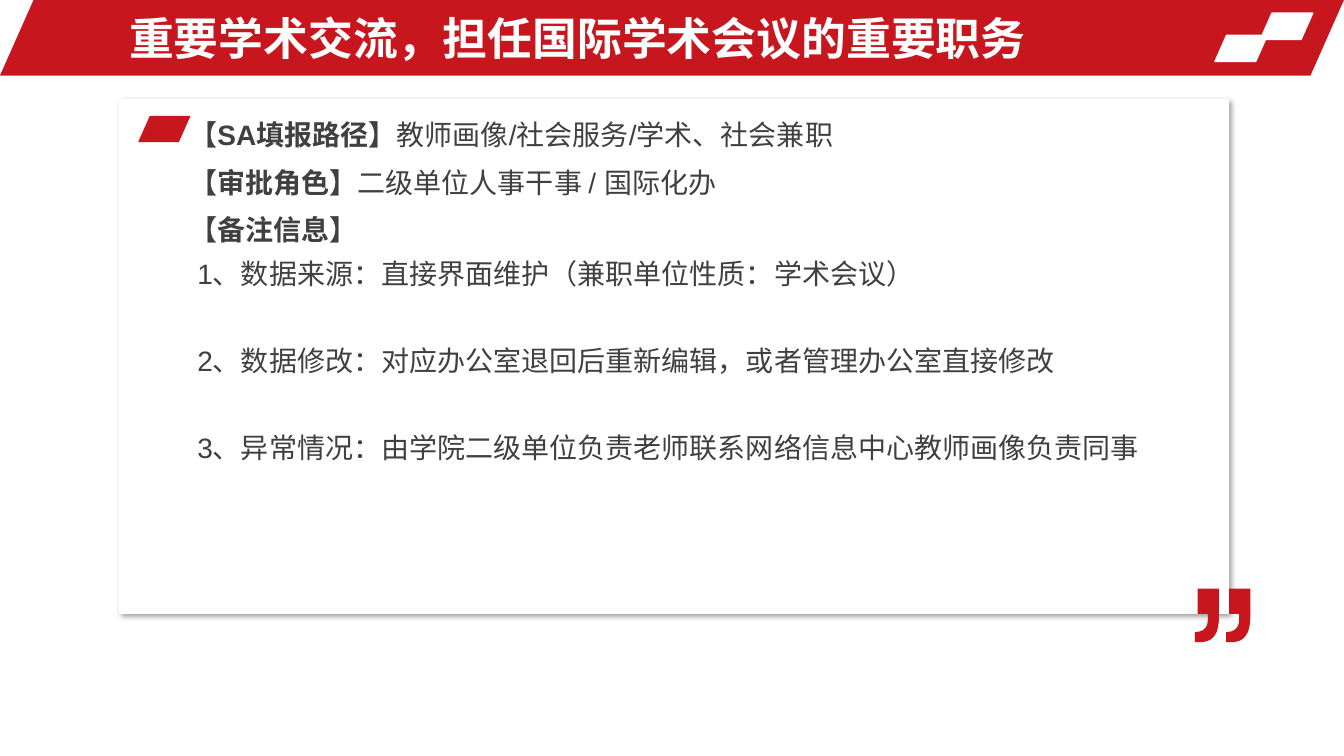
import dataclasses

import lxml.etree
import pptx
import pptx.dml.color
import pptx.enum.shapes
import pptx.enum.text
import pptx.oxml
import pptx.oxml.ns
import pptx.util


@dataclasses.dataclass(frozen=True)
class Theme:
    red = pptx.dml.color.RGBColor(0xC8, 0x16, 0x1E)
    white = pptx.dml.color.RGBColor(0xFF, 0xFF, 0xFF)
    ink = pptx.dml.color.RGBColor(0x40, 0x40, 0x40)
    font = "Arial"
    title_size = pptx.util.Pt(32)
    body_size = pptx.util.Pt(20)


theme = Theme()
deck = pptx.Presentation()
deck.slide_width = pptx.util.Inches(13.33)
deck.slide_height = pptx.util.Inches(7.5)
column = deck.slide_width / 100
row = deck.slide_height / 100
page = deck.slides.add_slide(deck.slide_layouts[5])
kinds = pptx.enum.shapes.MSO_SHAPE


def add_block(kind, left, top, width, height, fill, adjustment):
    """Add a filled preset shape placed in columns and rows."""
    block = page.shapes.add_shape(
        kind, round(left * column), round(top * row), round(width * column), round(height * row)
    )
    block.adjustments[0] = adjustment
    block.shadow.inherit = False
    block.fill.solid()
    block.fill.fore_color.rgb = fill
    block.line.fill.background()
    return block


def write(box, paragraphs, size=theme.body_size, color=theme.ink, line_spacing=1.3,
          anchor=pptx.enum.text.MSO_ANCHOR.TOP):
    """Fill a box with paragraphs, each a list of (text, bold) pairs."""
    frame = box.text_frame
    frame.word_wrap = True
    frame.auto_size = pptx.enum.text.MSO_AUTO_SIZE.NONE
    frame.vertical_anchor = anchor
    for index, pieces in enumerate(paragraphs):
        para = frame.add_paragraph() if index else frame.paragraphs[0]
        para.alignment = pptx.enum.text.PP_ALIGN.LEFT
        para.line_spacing = line_spacing
        para.space_before = pptx.util.Pt(0)
        for text, bold in pieces:
            span = para.add_run()
            span.text = text
            span.font.name = theme.font
            span.font.size = size
            span.font.bold = bold
            span.font.color.rgb = color


# Header
slant = 0.444
header = add_block(kinds.PARALLELOGRAM, 0, 0, 100, 10, theme.red, slant)
title = page.shapes.title
title._element.addprevious(header._element)
title.left, title.top = round(8.85 * column), round(0.67 * row)
title.width, title.height = round(75 * column), round(8.67 * row)
write(title, [[("重要学术交流，担任国际学术会议的重要职务", True)]], size=theme.title_size,
      color=theme.white, line_spacing=1.0, anchor=pptx.enum.text.MSO_ANCHOR.MIDDLE)

tile_width, tile_height = 3.9, 3.47
for left, top in ((93.78, 1.73), (90.4, 4.67)):
    tile = add_block(kinds.PARALLELOGRAM, left, top, tile_width, tile_height, theme.white, slant)
    tile.line.color.rgb = theme.white
    tile.line.width = pptx.util.Pt(1)

# Card with a soft shadow
card = add_block(kinds.ROUNDED_RECTANGLE, 8.85, 13.07, 82.6, 68.13, theme.white, 0)
effects = card._element.spPr.find(pptx.oxml.ns.qn("a:effectLst"))
shadow = lxml.etree.SubElement(
    effects, pptx.oxml.ns.qn("a:outerShdw"), blurRad=str(pptx.util.Pt(4)),
    dist=str(pptx.util.Pt(3)), dir=str(45 * 60000), algn="tl", rotWithShape="0",
)
shade = lxml.etree.SubElement(shadow, pptx.oxml.ns.qn("a:srgbClr"), val="000000")
lxml.etree.SubElement(shade, pptx.oxml.ns.qn("a:alpha"), val="40000")

# Closing quotation mark: both strokes share one outline, in shares of the slide width
# scaled to hundredths of a column; six numbers make a curve, two a corner.
stroke = (
    (180, 210), (180, 338, 135, 398, 38, 398), (0, 398), (0, 323),
    (68, 323, 98, 285, 98, 225), (98, 188), (22, 188), (22, 0),
)
corner_x, corner_y = 180, 0
curve_steps = 12
outline = []
for target in stroke:
    if len(target) == 2:
        outline.append(target)
    else:
        ax, ay, bx, by, end_x, end_y = target
        for step in range(1, curve_steps + 1):
            t = step / curve_steps
            u = 1 - t
            outline.append((
                u**3 * corner_x + 3 * u * u * t * ax + 3 * u * t * t * bx + t**3 * end_x,
                u**3 * corner_y + 3 * u * u * t * ay + 3 * u * t * t * by + t**3 * end_y,
            ))
    corner_x, corner_y = target[-2:]

stroke_gap = 233
builder = page.shapes.build_freeform(180, 0, scale=column / 100)
builder.add_line_segments(outline, close=True)
builder.move_to(180 + stroke_gap, 0)
builder.add_line_segments([(x + stroke_gap, y) for x, y in outline], close=True)
quote = builder.convert_to_shape(round(88.9 * column), round(77.87 * row))
quote.shadow.inherit = False
quote.fill.solid()
quote.fill.fore_color.rgb = theme.red
quote.line.fill.background()

add_block(kinds.PARALLELOGRAM, 10.28, 15.33, tile_width, tile_height, theme.red, slant)

# Notes in the card
notes = (
    (7.2, [[("【SA填报路径】", True), ("教师画像/社会服务/学术、社会兼职", False)]]),
    (7.2, [[("【审批角色】", True), ("二级单位人事干事 / 国际化办", False)]]),
    (36.4, [
        [("【备注信息】", True)],
        [("1、数据来源：直接界面维护（兼职单位性质：学术会议）", False)],
        [("2、数据修改：对应办公室退回后重新编辑，或者管理办公室直接修改", False)],
        [("3、异常情况：由学院二级单位负责老师联系网络信息中心教师画像负责同事", False)],
    ]),
)
for index, (height, paragraphs) in enumerate(notes):
    box = page.shapes.add_textbox(
        round(13.35 * column), round((13.6 + 6.27 * index) * row),
        round(73 * column), round(height * row),
    )
    write(box, paragraphs)
    for number, para in enumerate(box.text_frame.paragraphs):
        if number:
            para._p.get_or_add_pPr().set("marL", str(pptx.util.Inches(0.08)))
        if number > 1:
            para.space_before = pptx.util.Pt(31)

deck.save("out.pptx")
